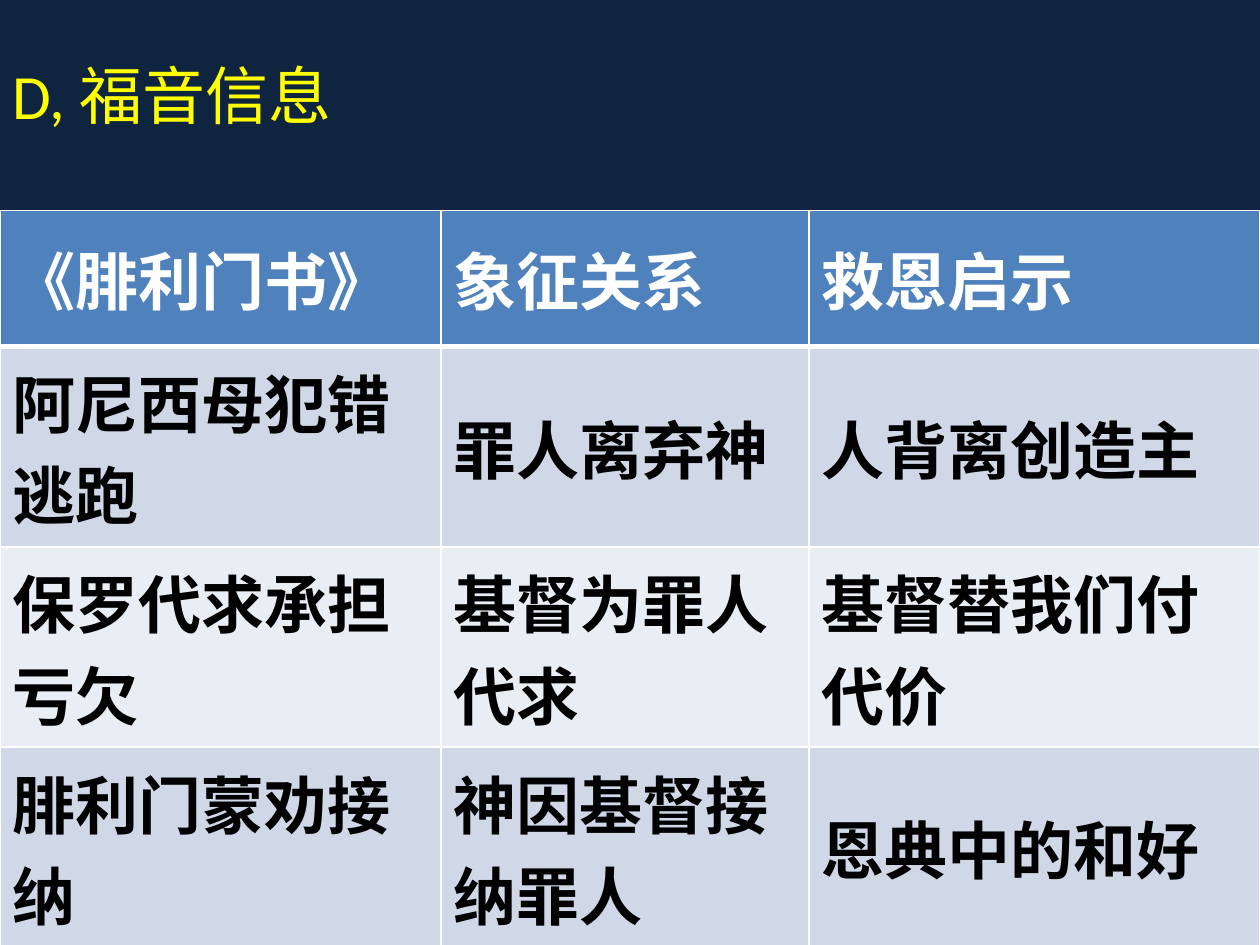
from lxml.etree import SubElement
from pptx import Presentation
from pptx.dml.color import RGBColor
from pptx.enum.text import MSO_ANCHOR, MSO_AUTO_SIZE, PP_ALIGN
from pptx.oxml.ns import qn
from pptx.util import Inches, Pt

# Content
TITLE = "D, 福音信息"
ROWS = [
    ("《腓利门书》", "象征关系", "救恩启示"),
    ("阿尼西母犯错逃跑", "罪人离弃神", "人背离创造主"),
    ("保罗代求承担亏欠", "基督为罪人代求", "基督替我们付代价"),
    ("腓利门蒙劝接纳", "神因基督接纳罪人", "恩典中的和好"),
]
COLUMN_WIDTHS = (3.5, 2.92, 3.58)
HEADER_HEIGHT, BODY_HEIGHT = 1.08, 1.59
TABLE_TOP = 1.67

# Colours
NAVY = RGBColor(0x0F, 0x24, 0x3E)
YELLOW = RGBColor(0xFF, 0xFF, 0x00)
WHITE = RGBColor(0xFF, 0xFF, 0xFF)
BLACK = RGBColor(0x00, 0x00, 0x00)
HEADER_BLUE = RGBColor(0x4F, 0x81, 0xBD)
BANDS = (RGBColor(0xD0, 0xD8, 0xE8), RGBColor(0xE9, 0xED, 0xF4))


def write(frame, text, *, font, color, bold=False, size=36):
    para = frame.paragraphs[0]
    para.alignment = PP_ALIGN.LEFT
    span = para.add_run()
    span.text = text
    span.font.name = font
    span.font.size = Pt(size)
    span.font.bold = bold
    span.font.color.rgb = color


def set_borders(cell, widths):
    properties = cell._tc.get_or_add_tcPr()
    for side, width in widths.items():
        line = SubElement(properties, qn(f"a:ln{side}"), w=str(Pt(width)))
        fill = SubElement(line, qn("a:solidFill"))
        SubElement(fill, qn("a:srgbClr"), val=str(WHITE))


def add_title(page):
    box = page.shapes.title
    box.left, box.top = Inches(0), Inches(0)
    box.width, box.height = Inches(9.99), Inches(1.5)
    frame = box.text_frame
    frame.word_wrap = True
    frame.auto_size = MSO_AUTO_SIZE.NONE
    frame.vertical_anchor = MSO_ANCHOR.MIDDLE
    write(frame, TITLE, font="Calibri", color=YELLOW)


def add_gospel_table(page):
    heights = [HEADER_HEIGHT] + [BODY_HEIGHT] * (len(ROWS) - 1)
    table = page.shapes.add_table(
        len(ROWS), len(COLUMN_WIDTHS), Inches(0), Inches(TABLE_TOP),
        Inches(sum(COLUMN_WIDTHS)), Inches(sum(heights))).table
    for column, width in zip(table.columns, COLUMN_WIDTHS):
        column.width = Inches(width)
    for row, height in zip(table.rows, heights):
        row.height = Inches(height)

    for row_index, texts in enumerate(ROWS):
        header = row_index == 0
        top = 3 if row_index == 1 else 1
        bottom = 3 if header else 1
        for column_index, text in enumerate(texts):
            cell = table.cell(row_index, column_index)
            set_borders(cell, {"L": 1, "R": 1, "T": top, "B": bottom})
            cell.fill.solid()
            cell.fill.fore_color.rgb = HEADER_BLUE if header else BANDS[(row_index - 1) % 2]
            cell.vertical_anchor = MSO_ANCHOR.MIDDLE
            write(cell.text_frame, text, font="Arial", bold=True,
                  color=WHITE if header else BLACK)


def main():
    deck = Presentation()
    deck.slide_width, deck.slide_height = Inches(10), Inches(7.5)
    page = deck.slides.add_slide(deck.slide_layouts.get_by_name("Title Only"))
    page.background.fill.solid()
    page.background.fill.fore_color.rgb = NAVY
    add_title(page)
    add_gospel_table(page)
    deck.save("out.pptx")


if __name__ == "__main__":
    main()
